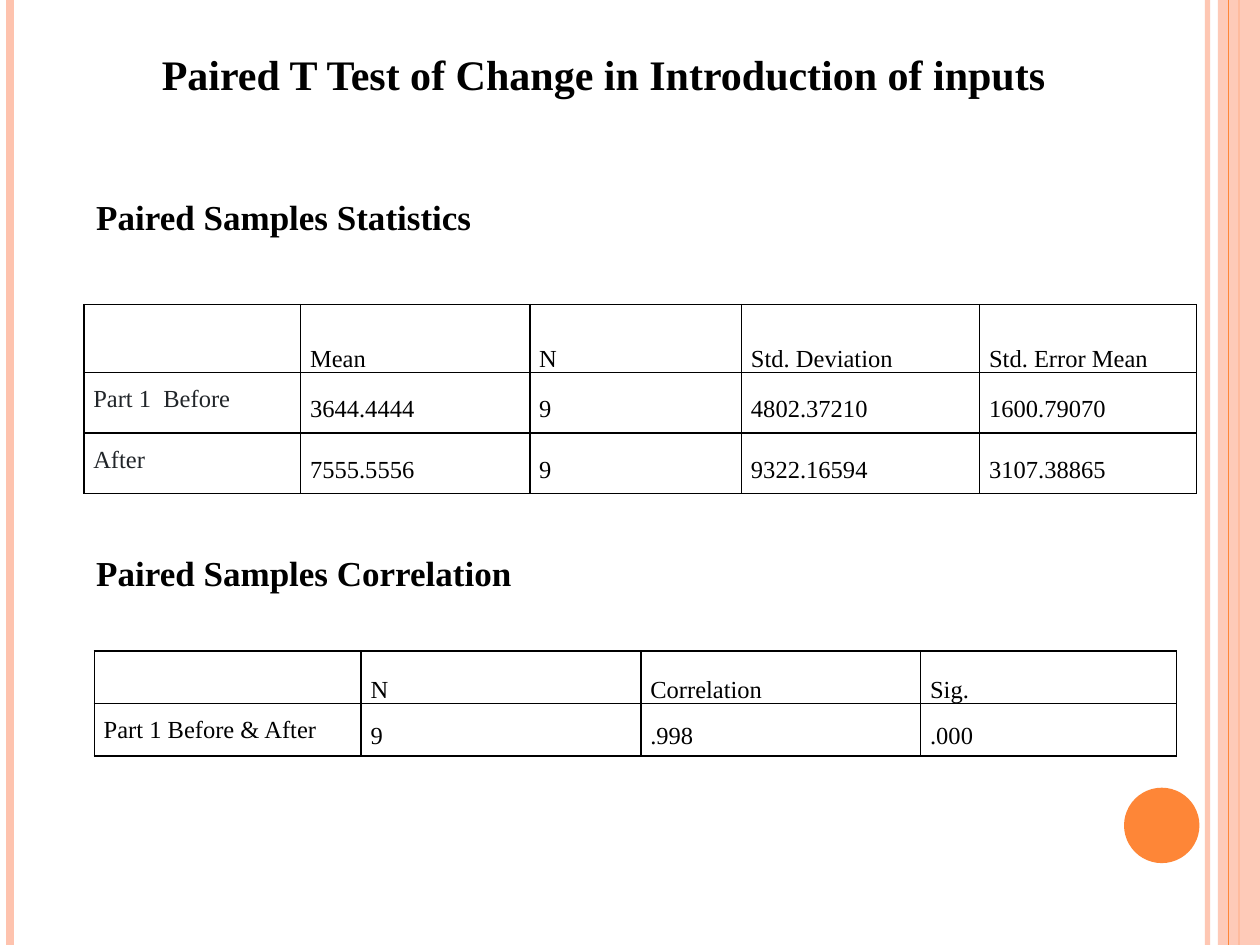
from dataclasses import dataclass

from lxml import etree
from pptx import Presentation
from pptx import util as u
from pptx.dml.color import RGBColor
from pptx.enum import shapes, text
from pptx.oxml.ns import qn


@dataclass(frozen=True)
class Theme:
    font: str = "Times New Roman"
    ink: str = "000000"
    soft_ink: str = "212529"
    peach: str = "FEC3AE"
    orange: str = "FE8637"
    title: int = 24
    heading: int = 20
    body: int = 14
    border: int = 1


def rgb(value):
    return RGBColor.from_string(value)


def set_alpha(fill_parent, percent):
    color = fill_parent.find(".//" + qn("a:srgbClr"))
    etree.SubElement(color, qn("a:alpha")).set("val", str(percent * 1000))


class SlideBuilder:
    def __init__(self, slide, theme):
        self.slide = slide
        self.theme = theme

    def style(self, p, size, color=None, bold=False):
        p.font.name = self.theme.font
        p.font.size = u.Pt(size)
        p.font.bold = bold
        p.font.color.rgb = rgb(color or self.theme.ink)

    def rule(self, x, color, width, alpha=None):
        """Draw a vertical line over the full slide height."""
        line = self.slide.shapes.add_connector(
            shapes.MSO_CONNECTOR.STRAIGHT, u.Cm(x), 0, u.Cm(x), u.Cm(19.05))
        line.line.color.rgb = rgb(color)
        line.line.width = u.Pt(width)
        sp_pr = line._element.spPr
        if alpha:
            set_alpha(sp_pr, alpha)
        etree.SubElement(sp_pr, qn("a:effectLst"))

    def shape(self, kind, x, y, w, h, color, alpha=None):
        sp = self.slide.shapes.add_shape(kind, u.Cm(x), u.Cm(y), u.Cm(w), u.Cm(h))
        sp.shadow.inherit = False
        sp.fill.solid()
        sp.fill.fore_color.rgb = rgb(color)
        sp.line.fill.background()
        if alpha:
            set_alpha(sp._element.spPr, alpha)

    def label(self, words, x, y, w, h, size, align=text.PP_ALIGN.LEFT, wrap=True):
        sp = self.slide.shapes.add_textbox(u.Cm(x), u.Cm(y), u.Cm(w), u.Cm(h))
        tf = sp.text_frame
        tf.word_wrap = wrap
        tf.auto_size = text.MSO_AUTO_SIZE.SHAPE_TO_FIT_TEXT
        p = tf.paragraphs[0]
        p.text = words
        p.alignment = align
        self.style(p, size, bold=True)

    def border(self, cell):
        tc_pr = cell._tc.get_or_add_tcPr()
        for i, side in enumerate(("lnL", "lnR", "lnT", "lnB")):
            ln = etree.Element(qn("a:" + side), w=str(u.Pt(self.theme.border)))
            fill = etree.SubElement(ln, qn("a:solidFill"))
            etree.SubElement(fill, qn("a:srgbClr"), val=self.theme.ink)
            tc_pr.insert(i, ln)

    def table(self, rows, x, y, widths, heights, stub_color):
        """Headers sit at the bottom, row names at the top, values in the middle."""
        table = self.slide.shapes.add_table(
            len(rows), len(widths), u.Cm(x), u.Cm(y),
            u.Cm(sum(widths)), u.Cm(sum(heights))).table
        table.first_row = table.horz_banding = False
        for column, width in zip(table.columns, widths):
            column.width = u.Cm(width)
        for r, (values, height) in enumerate(zip(rows, heights)):
            table.rows[r].height = u.Cm(height)
            for c, value in enumerate(values):
                cell = table.cell(r, c)
                cell.fill.background()
                self.border(cell)
                cell.margin_left = cell.margin_right = u.Cm(0.19)
                cell.margin_top = cell.margin_bottom = 0
                p = cell.text_frame.paragraphs[0]
                p.text = value
                p.alignment = text.PP_ALIGN.JUSTIFY
                p.line_spacing = 1.5
                is_stub = c == 0
                self.style(p, self.theme.body, stub_color if is_stub else None)
                if is_stub:
                    cell.vertical_anchor = text.MSO_ANCHOR.TOP
                    p.space_after = u.Pt(15 if r else 0)
                elif r == 0:
                    cell.vertical_anchor = text.MSO_ANCHOR.BOTTOM
                else:
                    cell.vertical_anchor = text.MSO_ANCHOR.MIDDLE


STATISTICS = [
    ("", "Mean", "N", "Std. Deviation", "Std. Error Mean"),
    ("Part 1  Before", "3644.4444", "9", "4802.37210", "1600.79070"),
    ("After", "7555.5556", "9", "9322.16594", "3107.38865"),
]
CORRELATION = [
    ("", "N", "Correlation", "Sig."),
    ("Part 1 Before & After", "9", ".998", ".000"),
]


def main():
    prs = Presentation()
    prs.slide_width, prs.slide_height = u.Cm(25.4), u.Cm(19.05)
    theme = Theme()
    s = SlideBuilder(prs.slides.add_slide(prs.slide_layouts[6]), theme)

    s.rule(24.34, theme.peach, 3, alpha=93)
    s.rule(0.21, theme.peach, 4.5)
    s.rule(24.98, theme.orange, 1.5)
    s.shape(shapes.MSO_SHAPE.RECTANGLE, 24.55, 0, 0.85, 19.05, theme.peach, alpha=87)
    s.rule(24.76, theme.orange, 0.75)
    s.shape(shapes.MSO_SHAPE.OVAL, 22.66, 15.88, 1.52, 1.52, theme.orange)

    s.label("Paired Samples Statistics", 1.69, 3.81, 8.13, 1.11, theme.heading, wrap=False)
    s.label("Paired Samples Correlation", 1.69, 11, 9.53, 1.11, theme.heading)
    s.label("Paired T Test of Change in Introduction of inputs",
            1.48, 0.85, 21.38, 1.28, theme.title, align=text.PP_ALIGN.CENTER)

    s.table(STATISTICS, 1.69, 6.14, (4.37, 4.62, 4.27, 4.8, 4.37),
            (1.37, 1.22, 1.22), theme.soft_ink)
    s.table(CORRELATION, 1.9, 13.12, (5.38, 5.64, 5.64, 5.16),
            (1.06, 1.06), theme.ink)
    prs.save("out.pptx")


if __name__ == "__main__":
    main()
